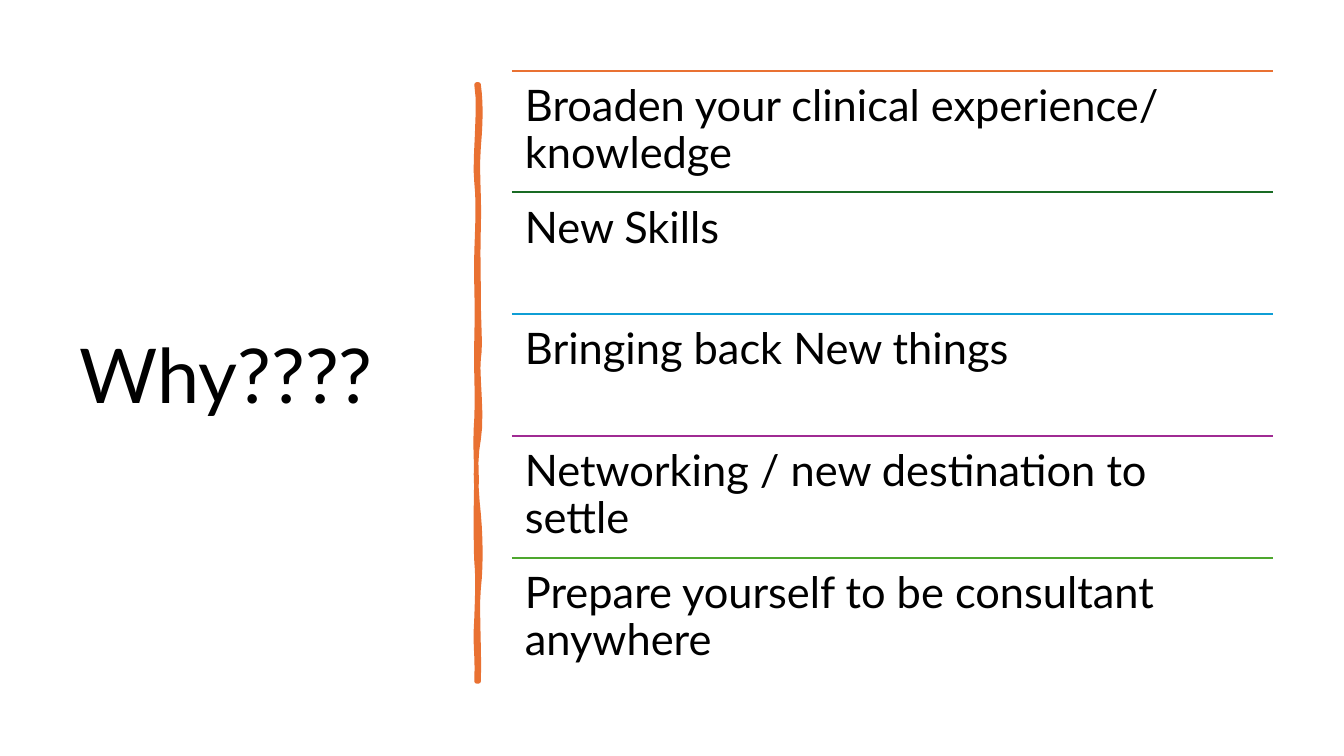
"""Builds the "Why????" slide: a title, a wavy divider and five ruled reasons."""
from dataclasses import dataclass

from lxml import etree
from pptx import Presentation
from pptx.dml.color import RGBColor
from pptx.enum.shapes import MSO_CONNECTOR
from pptx.enum.text import MSO_ANCHOR, MSO_AUTO_SIZE, PP_ALIGN
from pptx.oxml.ns import qn
from pptx.util import Cm, Pt

STRAIGHT = MSO_CONNECTOR.STRAIGHT
TOP, MIDDLE = MSO_ANCHOR.TOP, MSO_ANCHOR.MIDDLE
NO_FIT = MSO_AUTO_SIZE.NONE
LEFT = PP_ALIGN.LEFT
TITLE_ONLY = 5

REASONS = [
    ("Broaden your clinical experience/ knowledge", "E97132"),
    ("New Skills", "196B24"),
    ("Bringing back New things", "0F9ED5"),
    ("Networking / new destination to settle", "A02B93"),
    ("Prepare yourself to be consultant anywhere", "4EA72E"),
]
LIST_LEFT, LIST_TOP, LIST_WIDTH, ROW_HEIGHT = 12.9, 1.78, 19.18, 3.07

DIVIDER_START = (12.06, 2.13)
DIVIDER_CURVES = [
    ((12.12, 2.59), (12.12, 3.02), (12.06, 3.71)),
    ((12.01, 4.39), (12.09, 4.95), (12.06, 5.74)),
    ((12.04, 6.53), (12.06, 6.65), (12.06, 7.47)),
    ((12.06, 8.26), (12.12, 8.69), (12.06, 9.04)),
    ((12.01, 9.4), (12.17, 10.52), (12.06, 11.07)),
    ((11.96, 11.6), (11.99, 12.29), (12.06, 12.95)),
    ((12.12, 13.61), (12.12, 14.33), (12.06, 14.83)),
    ((12.01, 15.32), (12.09, 16.51), (12.06, 17.17)),
    ((12.04, 17.17), (12.01, 17.17), (12.01, 17.17)),
    ((12.04, 16.41), (11.96, 16.36), (12.01, 15.57)),
    ((12.04, 14.81), (12.04, 14.48), (12.01, 14.15)),
    ((11.99, 13.82), (11.99, 12.57), (12.01, 12.12)),
    ((12.01, 11.66), (11.96, 11.2), (12.01, 10.54)),
    ((12.04, 9.8), (11.99, 9.47), (12.01, 8.51)),
    ((12.04, 7.57), (11.99, 7.14), (12.01, 6.35)),
    ((12.04, 5.54), (12.06, 5.08), (12.01, 4.6)),
    ((11.94, 4.14), (12.12, 2.64), (12.01, 2.13)),
]


@dataclass(frozen=True)
class Theme:
    font: str = "Lato"
    text: str = "000000"
    accent: str = "E97132"
    title_size: float = 54
    reason_size: float = 31
    rule_width: float = 1.5
    divider_width: float = 3.25
    line_spacing: float = 0.9
    reason_inset: float = 0.33


def color(value):
    return RGBColor.from_string(value)


def write(box, text, *, theme, size, anchor=TOP, inset=None):
    frame = box.text_frame
    frame.word_wrap = True
    frame.auto_size = NO_FIT
    frame.vertical_anchor = anchor
    if inset is not None:
        frame.margin_left = frame.margin_right = Cm(inset)
        frame.margin_top = frame.margin_bottom = Cm(inset)
    para = frame.paragraphs[0]
    para.alignment = LEFT
    para.line_spacing = theme.line_spacing
    span = para.add_run()
    span.text = text
    span.font.name = theme.font
    span.font.size = Pt(size)
    span.font.color.rgb = color(theme.text)


def curve_points(start, curves, steps=6):
    points = []
    for first, second, end in curves:
        for step in range(1, steps + 1):
            t = step / steps
            u = 1 - t
            points.append(tuple(
                u**3 * a + 3 * u * u * t * b + 3 * u * t * t * c + t**3 * d
                for a, b, c, d in zip(start, first, second, end)
            ))
        start = end
    return points


class SlideBuilder:
    def __init__(self, page, theme):
        self.page = page
        self.theme = theme

    def title(self, text, left, top, width, height):
        box = self.page.shapes.title
        box.left, box.top = Cm(left), Cm(top)
        box.width, box.height = Cm(width), Cm(height)
        write(box, text, theme=self.theme, size=self.theme.title_size, anchor=MIDDLE)

    def divider(self, start, curves):
        points = [(Cm(x), Cm(y)) for x, y in curve_points(start, curves)]
        builder = self.page.shapes.build_freeform(Cm(start[0]), Cm(start[1]))
        builder.add_line_segments(points, close=True)
        shape = builder.convert_to_shape()
        shape.shadow.inherit = False
        shape.fill.solid()
        shape.fill.fore_color.rgb = color(self.theme.accent)
        shape.line.color.rgb = color(self.theme.accent)
        shape.line.width = Pt(self.theme.divider_width)

    def rule(self, left, top, width, line_color):
        line = self.page.shapes.add_connector(
            STRAIGHT, Cm(left), Cm(top), Cm(left + width), Cm(top))
        line.line.color.rgb = color(line_color)
        line.line.width = Pt(self.theme.rule_width)
        etree.SubElement(line._element.spPr, qn("a:effectLst"))

    def reason(self, text, left, top, width, height):
        box = self.page.shapes.add_textbox(Cm(left), Cm(top), Cm(width), Cm(height))
        write(box, text, theme=self.theme, size=self.theme.reason_size,
              inset=self.theme.reason_inset)


def main():
    deck = Presentation()
    deck.slide_width, deck.slide_height = Cm(33.87), Cm(19.05)
    page = deck.slides.add_slide(deck.slide_layouts[TITLE_ONLY])
    builder = SlideBuilder(page, Theme())
    builder.title("Why????", 1.75, 1.78, 9.5, 15.52)
    builder.divider(DIVIDER_START, DIVIDER_CURVES)
    for row, (text, line_color) in enumerate(REASONS):
        top = LIST_TOP + row * ROW_HEIGHT
        builder.rule(LIST_LEFT, top, LIST_WIDTH, line_color)
        builder.reason(text, LIST_LEFT, top, LIST_WIDTH, ROW_HEIGHT)
    deck.save("out.pptx")


if __name__ == "__main__":
    main()
